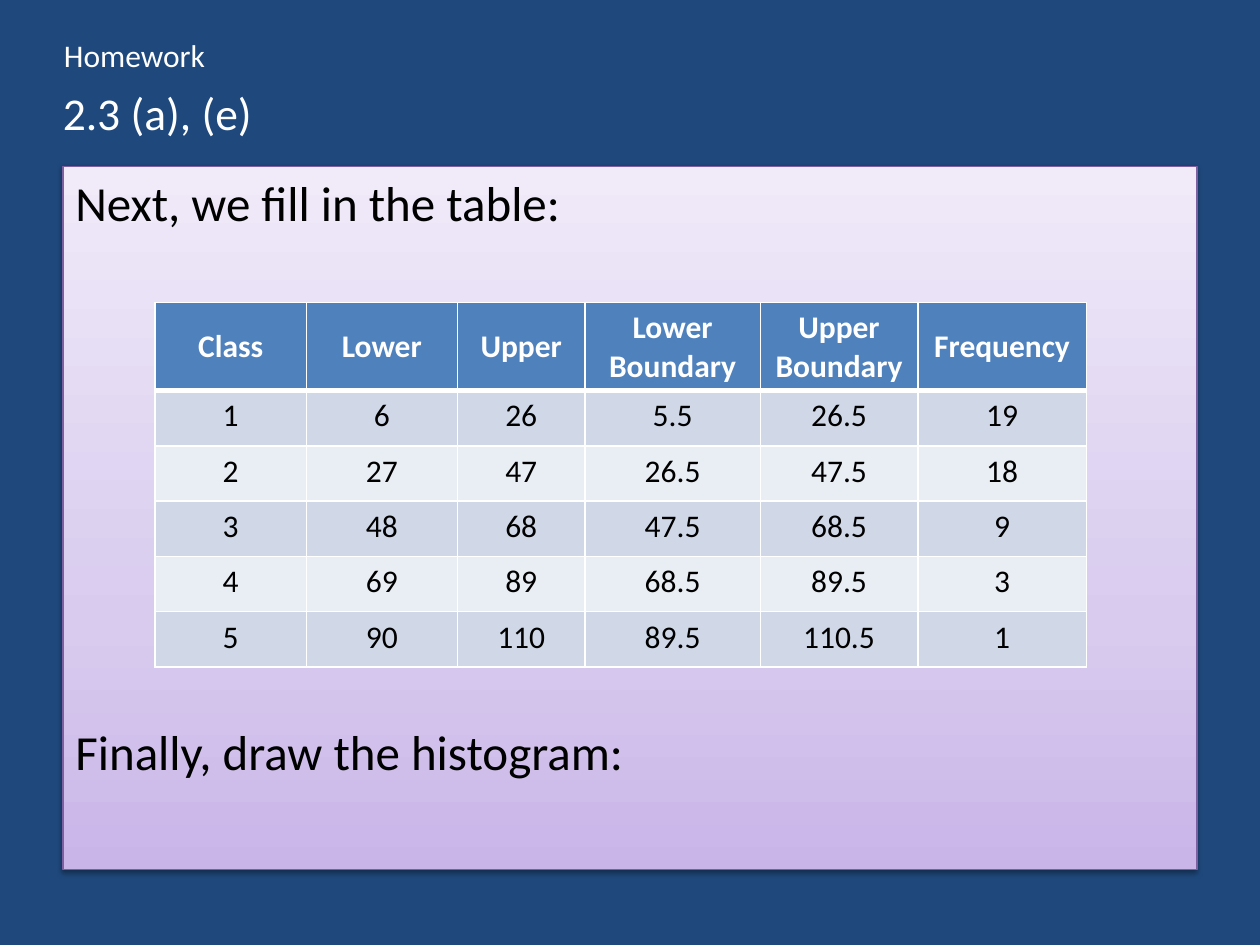
from pptx import Presentation
from pptx.util import Pt
from pptx.dml.color import RGBColor as Rgb
from pptx.enum.shapes import MSO_SHAPE as Kind
from pptx.enum.text import PP_ALIGN as Align, MSO_ANCHOR as Anchor
from pptx.oxml import parse_xml
from pptx.oxml.ns import nsdecls, qn

LABEL = "Homework"
TITLE = "2.3 (a), (e)"
BODY = ["Next, we fill in the table:", "Finally, draw the histogram:"]
HEAD = ["Class", "Lower", "Upper", "Lower Boundary", "Upper Boundary", "Frequency"]
ROWS = [
    ["1", "6", "26", "5.5", "26.5", "19"],
    ["2", "27", "47", "26.5", "47.5", "18"],
    ["3", "48", "68", "47.5", "68.5", "9"],
    ["4", "69", "89", "68.5", "89.5", "3"],
    ["5", "90", "110", "89.5", "110.5", "1"],
]
WIDTHS = [86.4, 86.4, 72.9, 100.2, 90, 96.4]
HEAD_H, ROW_H = 50.2, 31.6
BODY_GAP = 280

THEME = {
    "font": "Calibri",
    "back": "1F497D", "light": "FFFFFF", "dark": "000000",
    "edge": "7D60A0", "head": "4F81BD", "bands": ["D0D8E8", "E9EDF4"],
    "fade": [(0, "C9B5E8"), (35, "D8CBEE"), (100, "F0EAF9")],
    "small": 18, "title": 26, "body": 28,
}


def style(para, size, color, bold=False):
    for run in para.runs:
        font = run.font
        font.name, font.size, font.bold = THEME["font"], Pt(size), bold
        font.color.rgb = Rgb.from_string(color)


def add_text(slide, box, text, size, anchor):
    frame = slide.shapes.add_textbox(*map(Pt, box)).text_frame
    frame.word_wrap = True
    frame.vertical_anchor = anchor
    frame.text = text
    style(frame.paragraphs[0], size, THEME["light"])


def add_panel(slide, box):
    panel = slide.shapes.add_shape(Kind.RECTANGLE, *map(Pt, box))
    panel.line.color.rgb = Rgb.from_string(THEME["edge"])
    panel.line.width = Pt(0.75)
    panel.shadow.inherit = False
    props = panel._element.spPr
    stops = "".join(
        f'<a:gs pos="{pos * 1000}"><a:srgbClr val="{color}"/></a:gs>'
        for pos, color in THEME["fade"])
    props.find(qn("a:ln")).addprevious(parse_xml(
        f'<a:gradFill {nsdecls("a")} rotWithShape="1"><a:gsLst>{stops}</a:gsLst>'
        '<a:lin ang="16200000" scaled="0"/></a:gradFill>'))
    props.find(qn("a:effectLst")).append(parse_xml(
        f'<a:outerShdw {nsdecls("a")} blurRad="{Pt(3.1)}" dist="{Pt(1.6)}" '
        'dir="5400000" rotWithShape="0"><a:srgbClr val="000000">'
        '<a:alpha val="38000"/></a:srgbClr></a:outerShdw>'))
    frame = panel.text_frame
    frame.word_wrap = True
    frame.vertical_anchor = Anchor.TOP
    frame.text = "\n".join(BODY)
    for para in frame.paragraphs:
        para.alignment = Align.LEFT
        style(para, THEME["body"], THEME["dark"])
    frame.paragraphs[1].space_before = Pt(BODY_GAP)


def add_edges(cell, top, bottom):
    props = cell._tc.get_or_add_tcPr()
    sides = [("L", 1), ("R", 1), ("T", top), ("B", bottom)]
    for spot, (side, width) in enumerate(sides):
        props.insert(spot, parse_xml(
            f'<a:ln{side} {nsdecls("a")} w="{Pt(width)}"><a:solidFill>'
            f'<a:srgbClr val="{THEME["light"]}"/></a:solidFill></a:ln{side}>'))


def add_grid(slide, left, top):
    data = [HEAD] + ROWS
    high = HEAD_H + ROW_H * len(ROWS)
    grid = slide.shapes.add_table(
        len(data), len(HEAD), Pt(left), Pt(top), Pt(sum(WIDTHS)), Pt(high)).table
    for col, width in zip(grid.columns, WIDTHS):
        col.width = Pt(width)
    for r, texts in enumerate(data):
        first = r == 0
        grid.rows[r].height = Pt(HEAD_H if first else ROW_H)
        fill = THEME["head"] if first else THEME["bands"][(r - 1) % 2]
        for c, text in enumerate(texts):
            cell = grid.cell(r, c)
            cell.text = text
            cell.margin_left = cell.margin_right = Pt(7.8)
            cell.vertical_anchor = Anchor.MIDDLE if first else Anchor.TOP
            cell.fill.solid()
            cell.fill.fore_color.rgb = Rgb.from_string(fill)
            add_edges(cell, 3 if r == 1 else 1, 3 if first else 1)
            para = cell.text_frame.paragraphs[0]
            para.alignment = Align.CENTER
            style(para, THEME["small"], THEME["light" if first else "dark"], first)


def main():
    deck = Presentation()
    deck.slide_width, deck.slide_height = Pt(720), Pt(540)
    slide = deck.slides.add_slide(deck.slide_layouts[6])
    slide.background.fill.solid()
    slide.background.fill.fore_color.rgb = Rgb.from_string(THEME["back"])
    add_text(slide, (28.8, 44.6, 648, 38.9), TITLE, THEME["title"], Anchor.MIDDLE)
    add_panel(slide, (36, 95, 648, 401.8))
    add_text(slide, (29.5, 17.3, 643, 28.8), LABEL, THEME["small"], Anchor.TOP)
    add_grid(slide, 88.6, 172.8)
    deck.save("out.pptx")


if __name__ == "__main__":
    main()
